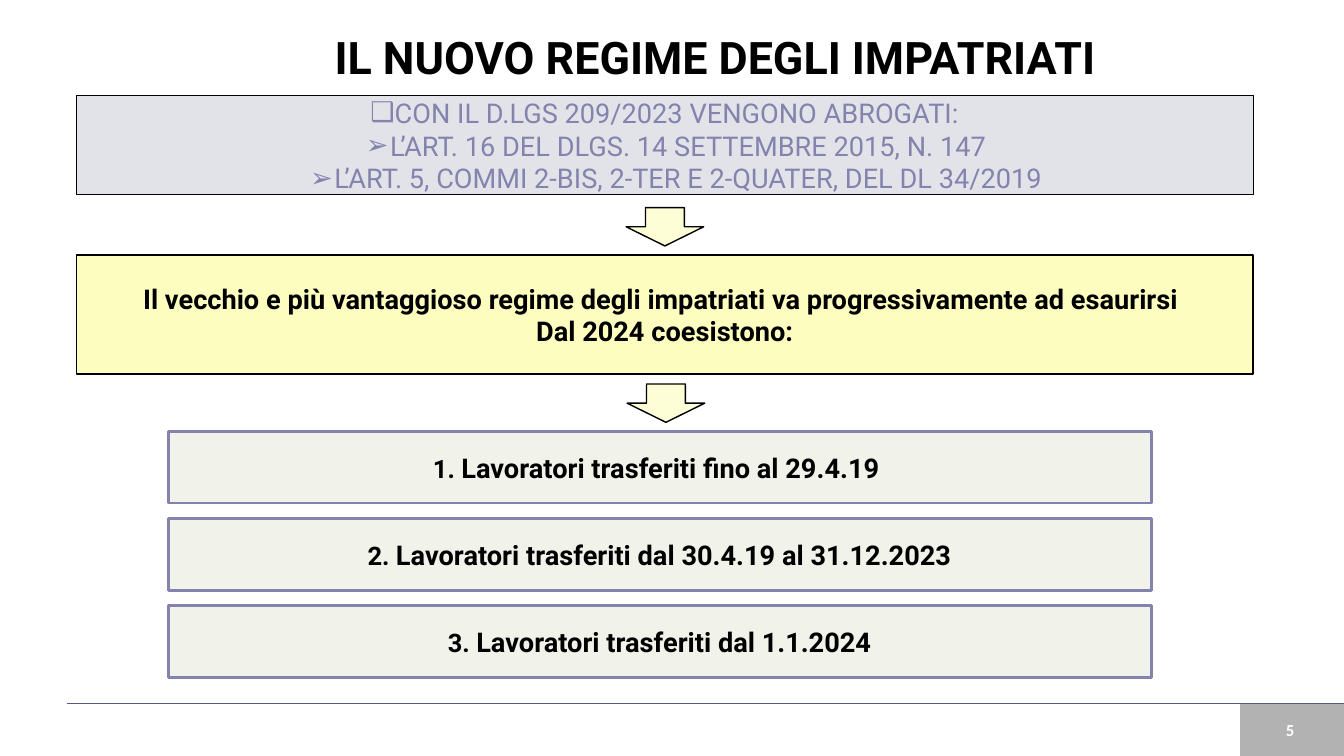
from dataclasses import dataclass

from lxml import etree
from pptx import Presentation
from pptx.dml.color import RGBColor
from pptx.enum.shapes import MSO_CONNECTOR as Connector, MSO_SHAPE as Preset
from pptx.enum.text import MSO_ANCHOR as Anchor, MSO_AUTO_SIZE as AutoSize, PP_ALIGN as Align
from pptx.oxml.ns import qn
from pptx.util import Inches, Pt

BLACK, WHITE, VIOLET = "000000", "FFFFFF", "8383AD"
BODY_SIZE, NUMBER_SIZE = 19.4, 18.2


@dataclass
class Box:
    left: float
    top: float
    width: float
    height: float
    fill: str = ""
    line: str = BLACK
    line_width: float = 1
    preset: Preset = Preset.RECTANGLE


@dataclass
class Words:
    text: str
    size: float = BODY_SIZE
    color: str = BLACK
    bold: bool = True
    font: str = "Roboto"


@dataclass
class Bullet:
    symbol: str
    margin: float
    indent: float
    text: str


def rgb(code: str) -> RGBColor:
    return RGBColor.from_string(code)


def place(shape, box: Box) -> None:
    bounds = {"left": box.left, "top": box.top, "width": box.width, "height": box.height}
    for name, value in bounds.items():
        setattr(shape, name, Inches(value))


def paint(shape, box: Box) -> None:
    shape.fill.solid()
    shape.fill.fore_color.rgb = rgb(box.fill)
    if box.line:
        shape.line.color.rgb = rgb(box.line)
        shape.line.width = Pt(box.line_width)
    else:
        shape.line.fill.background()


def write(shape, paragraphs: list[list[Words]], wrap: bool = True) -> None:
    frame = shape.text_frame
    frame_format = {"word_wrap": wrap, "auto_size": AutoSize.NONE,
                    "vertical_anchor": Anchor.MIDDLE}
    for name, value in frame_format.items():
        setattr(frame, name, value)
    for index, words_list in enumerate(paragraphs):
        paragraph = frame.add_paragraph() if index else frame.paragraphs[0]
        paragraph.alignment = Align.CENTER
        paragraph.space_before = Pt(0)
        for words in words_list:
            run = paragraph.add_run()
            run.text = words.text
            run_format = {"name": words.font, "size": Pt(words.size), "bold": words.bold}
            for name, value in run_format.items():
                setattr(run.font, name, value)
            run.font.color.rgb = rgb(words.color)


def add_box(slide, box: Box, paragraphs: list[list[Words]] | None = None):
    shape = slide.shapes.add_shape(box.preset, 0, 0, 0, 0)
    shape.shadow.inherit = False
    place(shape, box)
    paint(shape, box)
    if paragraphs:
        write(shape, paragraphs)
    return shape


def add_bullet(paragraph, bullet: Bullet) -> None:
    properties = paragraph._p.get_or_add_pPr()
    properties.set("marL", str(Inches(bullet.margin)))
    properties.set("indent", str(Inches(bullet.indent)))
    etree.SubElement(properties, qn("a:buChar"), char=bullet.symbol)


REPEALED = [
    Bullet("❑", 0.23, -0.23, "CON IL D.LGS 209/2023 VENGONO ABROGATI:"),
    Bullet("➢", 0.47, -0.24, "L’ART. 16 DEL DLGS. 14 SETTEMBRE 2015, N. 147"),
    Bullet("➢", 0.47, -0.24, "L’ART. 5, COMMI 2-BIS, 2-TER E 2-QUATER, DEL DL 34/2019"),
]
COEXISTENCE = [
    "Il vecchio e più vantaggioso regime degli impatriati va progressivamente ad esaurirsi ",
    "Dal 2024 coesistono:",
]
WORKER_GROUPS = [
    "Lavoratori trasferiti fino al 29.4.19 ",
    "Lavoratori trasferiti dal 30.4.19 al 31.12.2023",
    "Lavoratori trasferiti dal 1.1.2024",
]


def add_footer(slide) -> None:
    page_block = add_box(slide, Box(12.3, 6.98, 1.03, 0.52, BLACK, line=""))
    color = page_block.fill._xPr.find(qn("a:solidFill"))[0]
    etree.SubElement(color, qn("a:alpha"), val="30000")

    page_number = slide.shapes.add_textbox(0, 0, 0, 0)
    place(page_number, Box(12.26, 6.98, 1.07, 0.52))
    write(page_number, [[Words("5", 12, WHITE, font="Calibri")]], wrap=False)

    rule = slide.shapes.add_connector(
        Connector.STRAIGHT, Inches(0.66), Inches(6.98), Inches(13.33), Inches(6.98))
    rule.line.color.rgb = rgb("595988")
    rule.line.width = Pt(1)
    etree.SubElement(rule._element.spPr, qn("a:effectLst"))


def main() -> None:
    deck = Presentation()
    deck.slide_width, deck.slide_height = Inches(13.33), Inches(7.5)
    slide = deck.slides.add_slide(deck.slide_layouts[1])
    add_footer(slide)

    # Title
    title = slide.shapes.title
    place(title, Box(0.86, 0.26, 12.47, 0.6))
    write(title, [[Words("IL NUOVO REGIME DEGLI IMPATRIATI", 32)]])

    # Repealed rules
    repealed = slide.placeholders[1]
    repealed_box = Box(0.76, 0.95, 11.67, 0.98, "E2E2E9")
    place(repealed, repealed_box)
    paint(repealed, repealed_box)
    write(repealed, [[Words(b.text, color=VIOLET, bold=False)] for b in REPEALED])
    for paragraph, bullet in zip(repealed.text_frame.paragraphs, REPEALED):
        add_bullet(paragraph, bullet)

    # Old regime running out
    add_box(slide, Box(0.76, 2.53, 11.67, 1.18, "FDFDBF"),
            [[Words(text)] for text in COEXISTENCE])

    # Arrows between the steps
    for left, top in ((6.21, 2.06), (6.22, 3.81)):
        add_box(slide, Box(left, top, 0.77, 0.38, "FEFED6", preset=Preset.DOWN_ARROW))

    # Groups of workers
    for index, text in enumerate(WORKER_GROUPS):
        add_box(slide, Box(1.67, 4.28 + 0.865 * index, 9.75, 0.71, "F1F2E9", VIOLET, 2),
                [[Words(f"{index + 1}. ", NUMBER_SIZE), Words(text)]])

    deck.save("out.pptx")


if __name__ == "__main__":
    main()
